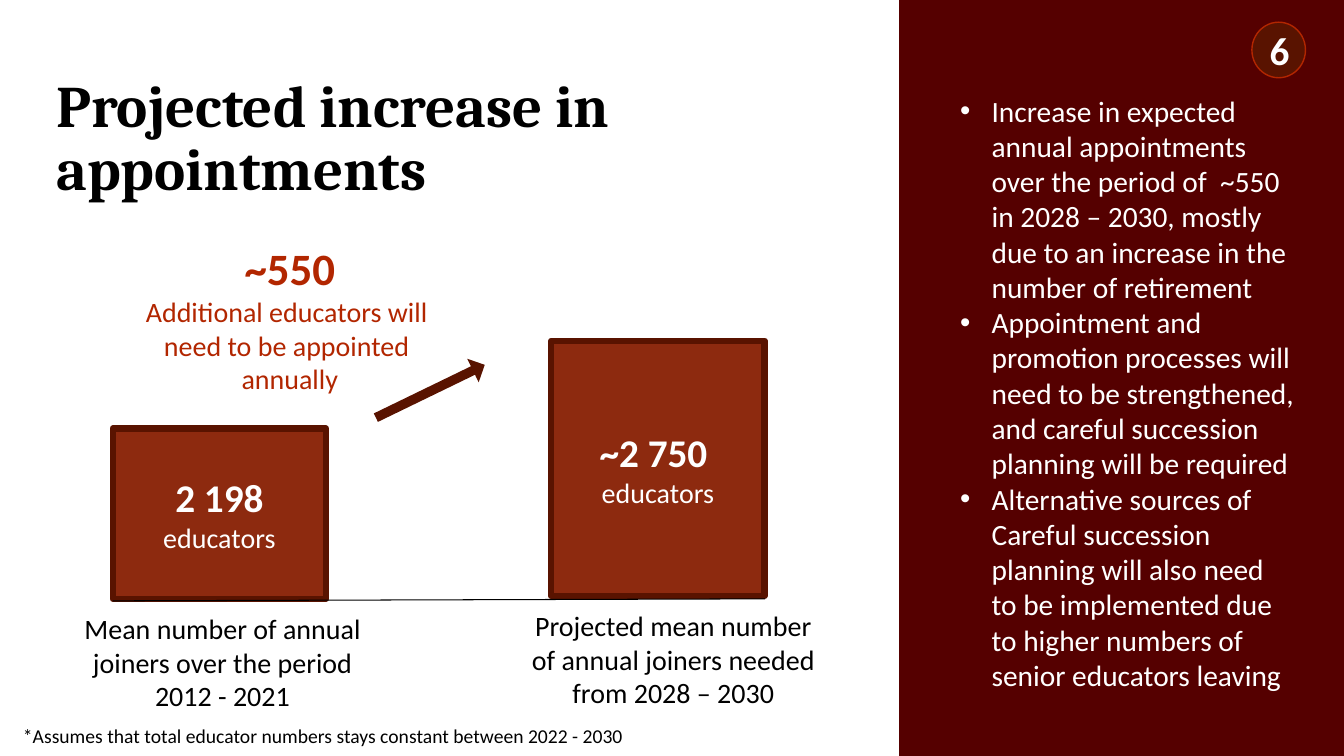
import pptx
import pptx.util
import pptx.dml.color
import pptx.enum.shapes
import pptx.enum.text
import pptx.oxml
import pptx.oxml.ns
from lxml import etree

Cm, Pt = pptx.util.Cm, pptx.util.Pt
SHAPE = pptx.enum.shapes.MSO_SHAPE
ALIGN = pptx.enum.text.PP_ALIGN
ANCHOR = pptx.enum.text.MSO_ANCHOR

HUES = {
    "panel": "550000",
    "bar": "861D00",
    "edge": "591300",
    "accent": "B22600",
    "white": "FFFFFF",
    "black": "000000",
}

POINTS = [
    "Increase in expected annual appointments over the period of  ~550 in 2028 – 2030, "
    "mostly due to an increase in the number of retirement",
    "Appointment and promotion processes will need to be strengthened, "
    "and careful succession planning will be required",
    "Alternative sources of Careful succession planning will also need to be "
    "implemented due to higher numbers of senior educators leaving",
]


def rgb(hue):
    return pptx.dml.color.RGBColor.from_string(HUES[hue])


def add_sub(node, tag, **attrs):
    return etree.SubElement(node, pptx.oxml.ns.qn(tag), attrs)


def write(shape, lines, size, hue, head=None, bold=False, font="Calibri",
          align=ALIGN.CENTER, anchor=ANCHOR.MIDDLE):
    """Fill a shape with lines; head is the size of a bold first line."""
    frame = shape.text_frame
    frame.word_wrap = True
    frame.vertical_anchor = anchor
    frame.text = "\n".join(lines)
    for i, para in enumerate(frame.paragraphs):
        para.alignment = align
        top = head is not None and i == 0
        for run in para.runs:
            run.font.name = font
            run.font.size = Pt(head if top else size)
            run.font.bold = bold or top
            run.font.color.rgb = rgb(hue)
    return frame


def add_text(slide, box, lines, size, hue, **style):
    shape = slide.shapes.add_textbox(*map(Cm, box))
    return write(shape, lines, size, hue, **style)


def add_form(slide, kind, box, fill, edge=None, width=0):
    shape = slide.shapes.add_shape(kind, *map(Cm, box))
    shape.shadow.inherit = False
    shape.fill.solid()
    shape.fill.fore_color.rgb = rgb(fill)
    if edge:
        shape.line.color.rgb = rgb(edge)
        shape.line.width = Pt(width)
    else:
        shape.line.fill.background()
    return shape


def add_bar(slide, left, top, high, count):
    bar = add_form(slide, SHAPE.RECTANGLE, (left, top, 5.38, high), "bar", "edge", 4.5)
    tint = bar.fill._xPr.find(".//" + pptx.oxml.ns.qn("a:srgbClr"))
    add_sub(tint, "a:alpha", val="94000")
    write(bar, [count, "educators"], 20, "white", head=28)


def add_list(slide, box, points):
    frame = add_text(slide, box, points, 21, "white",
                     align=ALIGN.LEFT, anchor=ANCHOR.TOP)
    for para in frame.paragraphs:
        props = para._p.get_or_add_pPr()
        props.set("marL", str(Cm(0.79)))
        props.set("indent", str(-Cm(0.79)))
        tint = add_sub(props, "a:buClr")
        add_sub(tint, "a:srgbClr", val=HUES["white"])
        add_sub(props, "a:buFont", typeface="Arial")
        add_sub(props, "a:buChar", char="•")


def add_line(slide, ends, hue, width):
    line = slide.shapes.add_connector(
        pptx.enum.shapes.MSO_CONNECTOR.STRAIGHT, *map(Cm, ends))
    line.line.color.rgb = rgb(hue)
    line.line.width = Pt(width)
    add_sub(line._element.spPr, "a:effectLst")


def main():
    deck = pptx.Presentation()
    deck.slide_width, deck.slide_height = Cm(33.87), Cm(19.05)
    slide = deck.slides.add_slide(deck.slide_layouts[6])

    # Side panel and title
    add_form(slide, SHAPE.RECTANGLE, (22.66, 0, 11.21, 19.05), "panel")
    title = add_text(slide, (1.17, 2.21, 20.22, 2.64),
                     ["Projected increase in appointments"], 42, "black",
                     bold=True, font="Cambria", align=ALIGN.LEFT)
    title.paragraphs[0].line_spacing = 0.9

    # Callout and bar labels
    add_text(slide, (3.05, 5.97, 8.51, 4.09),
             ["~550", "Additional educators will ", "need to be appointed ", "annually"],
             20, "accent", head=32)
    for left, top, label in (
            (1.52, 15.29, "Mean number of annual joiners over the period 2012 - 2021"),
            (12.88, 15.21, "Projected mean number of annual joiners needed from 2028 – 2030")):
        add_text(slide, (left, top, 8.18, 2.6), [label], 20, "black", anchor=ANCHOR.TOP)

    # Panel points
    add_list(slide, (23.95, 2.21, 8.94, 15.65), POINTS)

    # Bars, arrow and base line
    add_bar(slide, 2.84, 10.8, 4.29, "2 198")
    add_bar(slide, 13.89, 8.59, 6.43, "~2 750 ")
    arrow = add_form(slide, SHAPE.RIGHT_ARROW, (9.32, 9.53, 3.05, 0.66), "edge")
    arrow.adjustments[0] = 0.36
    arrow.rotation = 334.1
    add_line(slide, (2.84, 15.14, 19.28, 15.09), "black", 0.75)

    # Page number and footnote
    badge = add_form(slide, SHAPE.OVAL, (31.55, 0.56, 1.35, 1.4), "edge", "accent", 1)
    write(badge, ["6"], 28, "white", bold=True)
    add_text(slide, (0.33, 18.19, 21.06, 0.69),
             ["*Assumes that total educator numbers stays constant between 2022 - 2030"],
             14, "black", align=ALIGN.LEFT)

    deck.save("out.pptx")


if __name__ == "__main__":
    main()
